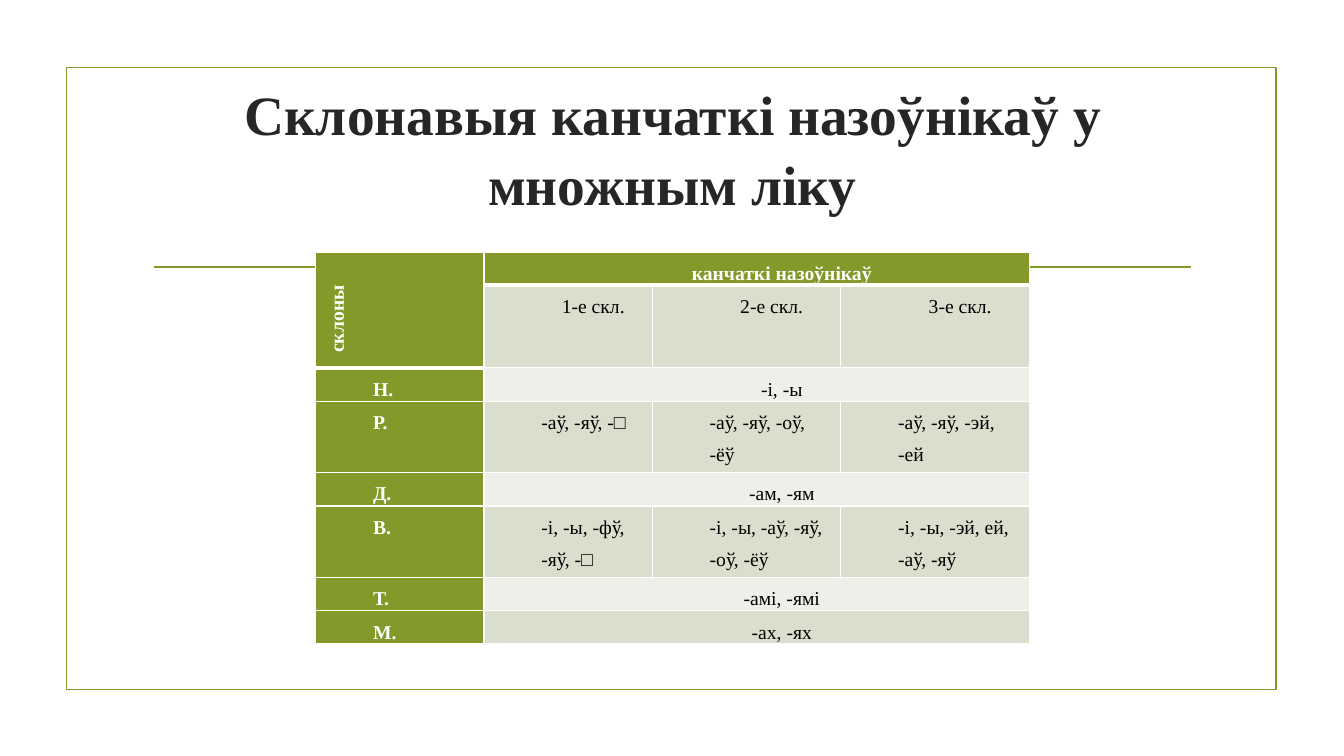
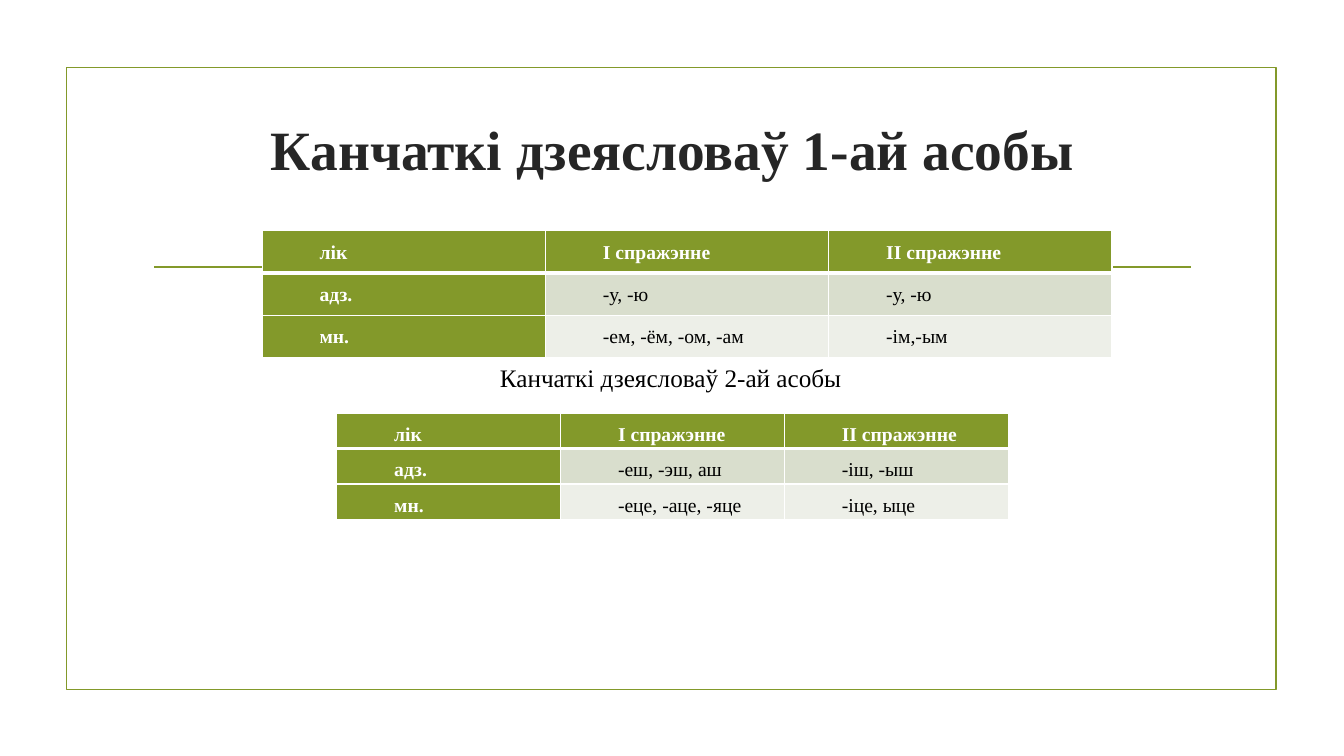
from dataclasses import dataclass, field

from lxml.etree import SubElement
from pptx import Presentation
from pptx.dml.color import RGBColor
from pptx.enum.shapes import MSO_CONNECTOR, MSO_SHAPE
from pptx.enum.text import MSO_ANCHOR, MSO_AUTO_SIZE, PP_ALIGN
from pptx.oxml import parse_xml
from pptx.oxml.ns import nsdecls, qn
from pptx.util import Inches, Pt

GREEN = RGBColor(0x83, 0x99, 0x2A)
DARK = RGBColor(0x26, 0x26, 0x26)
BLACK = RGBColor(0, 0, 0)
WHITE = RGBColor(255, 255, 255)
BANDS = RGBColor(0xED, 0xEF, 0xE8), RGBColor(0xD9, 0xDE, 0xCD)


@dataclass
class Deck:
    show: object = field(default_factory=Presentation)
    slide: object = None
    face: str = "Times New Roman"

    def size(self, width, height):
        self.show.slide_width = Inches(width)
        self.show.slide_height = Inches(height)

    def style(self, para, size, color, bold=False):
        font = para.font
        font.name, font.size, font.bold = self.face, Pt(size), bold
        font.color.rgb = color

    def page(self, title):
        self.slide = self.show.slides.add_slide(self.show.slide_layouts[5])
        self.frame()
        self.rule()
        self.title(title)

    def frame(self):
        box = self.slide.shapes.add_shape(
            MSO_SHAPE.RECTANGLE, Inches(0.66), Inches(0.67), Inches(12), Inches(6.17))
        box.shadow.inherit = False
        box.fill.background()
        box.line.color.rgb = GREEN
        box.line.width = Pt(1.25)

    def rule(self):
        line = self.slide.shapes.add_connector(
            MSO_CONNECTOR.STRAIGHT, Inches(1.53), Inches(2.65), Inches(11.81), Inches(2.65))
        line.line.color.rgb = GREEN
        line.line.width = Pt(1.25)
        SubElement(line._element.spPr, qn("a:effectLst"))

    def title(self, text):
        box = self.slide.shapes.title
        box.left, box.top = Inches(1.42), Inches(1.07)
        box.width, box.height = Inches(10.5), Inches(1.43)
        body = box.text_frame
        body.text = text
        body.word_wrap = True
        body.auto_size = MSO_AUTO_SIZE.NONE
        body.vertical_anchor = MSO_ANCHOR.MIDDLE
        para = body.paragraphs[0]
        para.alignment = PP_ALIGN.CENTER
        para.line_spacing = 1.05
        self.style(para, 39.6, DARK, True)

    def label(self, text, left, top, width, height):
        box = self.slide.shapes.add_textbox(
            Inches(left), Inches(top), Inches(width), Inches(height))
        body = box.text_frame
        body.text = text
        body.word_wrap = False
        body.auto_size = MSO_AUTO_SIZE.SHAPE_TO_FIT_TEXT
        self.style(body.paragraphs[0], 18, BLACK)

    def edge(self, cell, top, base):
        props = cell._tc.get_or_add_tcPr()
        sides = ("L", 1), ("R", 1), ("T", top), ("B", base)
        for spot, (side, width) in enumerate(sides):
            props.insert(spot, parse_xml(
                f'<a:ln{side} {nsdecls("a")} w="{Pt(width)}"><a:solidFill>'
                f'<a:srgbClr val="{WHITE}"/></a:solidFill></a:ln{side}>'))

    def cell(self, cell, text, fill, color, bold, mid, indent):
        cell.fill.solid()
        cell.fill.fore_color.rgb = fill
        cell.margin_left = cell.margin_right = Inches(0.07)
        cell.margin_top = cell.margin_bottom = 0
        cell.text = text
        para = cell.text_frame.paragraphs[0]
        para._p.get_or_add_pPr().set("marL", str(Inches(indent)))
        para.alignment = PP_ALIGN.CENTER if mid else PP_ALIGN.LEFT
        para.line_spacing = 1.5
        self.style(para, 14, color, bold)

    def table(self, left, top, widths, heights, data, heads=1):
        grid = self.slide.shapes.add_table(
            len(heights), len(widths), Inches(left), Inches(top),
            Inches(sum(widths)), Inches(sum(heights))).table
        grid.first_row = grid.horz_banding = False
        for col, width in zip(grid.columns, widths):
            col.width = Inches(width)
        for row, height in zip(grid.rows, heights):
            row.height = Inches(height)
        last = len(widths) - 1
        for r, texts in enumerate(data):
            wide = len(texts) == 2
            for c in range(last + 1):
                deep = 1 if c else heads
                head = c == 0 or r < deep
                cell = grid.cell(r, c)
                self.cell(
                    cell, texts[c] if c < len(texts) else "",
                    GREEN if head else BANDS[r % 2],
                    WHITE if head else BLACK, head,
                    c > 0 and (wide or 0 < r < heads),
                    0.08 if heads > 1 and c == 0 and r < heads else 0.5)
                self.edge(cell, 3 if r == deep else 1, 3 if r == deep - 1 else 1)
            if wide:
                grid.cell(r, 1).merge(grid.cell(r, last))
        if heads > 1:
            grid.cell(0, 0).merge(grid.cell(heads - 1, 0))
            grid.cell(0, 0)._tc.get_or_add_tcPr().set("vert", "vert270")


def main():
    deck = Deck()
    deck.size(13.33, 7.5)

    deck.page("Склонавыя канчаткі назоўнікаў у множным ліку\v")
    deck.table(
        3.13, 2.5, [1.67, 1.67, 1.87, 1.87],
        [0.33, 0.82, 0.33, 0.71, 0.33, 0.71, 0.33, 0.33],
        [
            ["склоны", "канчаткі назоўнікаў"],
            ["", "1-е скл.", "2-е скл.", "3-е скл."],
            ["Н.", "-і, -ы"],
            ["Р.", "-аў, -яў, -□", "-аў, -яў, -оў, -ёў", "-аў, -яў, -эй, -ей"],
            ["Д.", "-ам, -ям"],
            ["В.", "-і, -ы, -фў, -яў, -□", "-і, -ы, -аў, -яў, -оў, -ёў",
             "-і, -ы, -эй, ей, -аў, -яў"],
            ["Т.", "-амі, -ямі"],
            ["М.", "-ах, -ях"],
        ], heads=2)

    deck.page("Канчаткі дзеясловаў 1-ай асобы\v")
    top = ["лік", "I спражэнне", "II спражэнне"]
    deck.table(2.6, 2.29, [2.81] * 3, [0.42] * 3, [
        top,
        ["адз.", "-у, -ю", "-у, -ю"],
        ["мн.", "-ем, -ём, -ом, -ам", "-ім,-ым"],
    ])
    deck.label("Канчаткі дзеясловаў 2-ай асобы", 4.86, 3.55, 3.62, 0.4)
    deck.table(3.34, 4.1, [2.22] * 3, [0.32] * 3, [
        top,
        ["адз.", "-еш, -эш, аш", "-іш, -ыш"],
        ["мн.", "-еце, -аце, -яце", "-іце, ыце"],
    ])

    deck.show.save("out.pptx")


if __name__ == "__main__":
    main()
